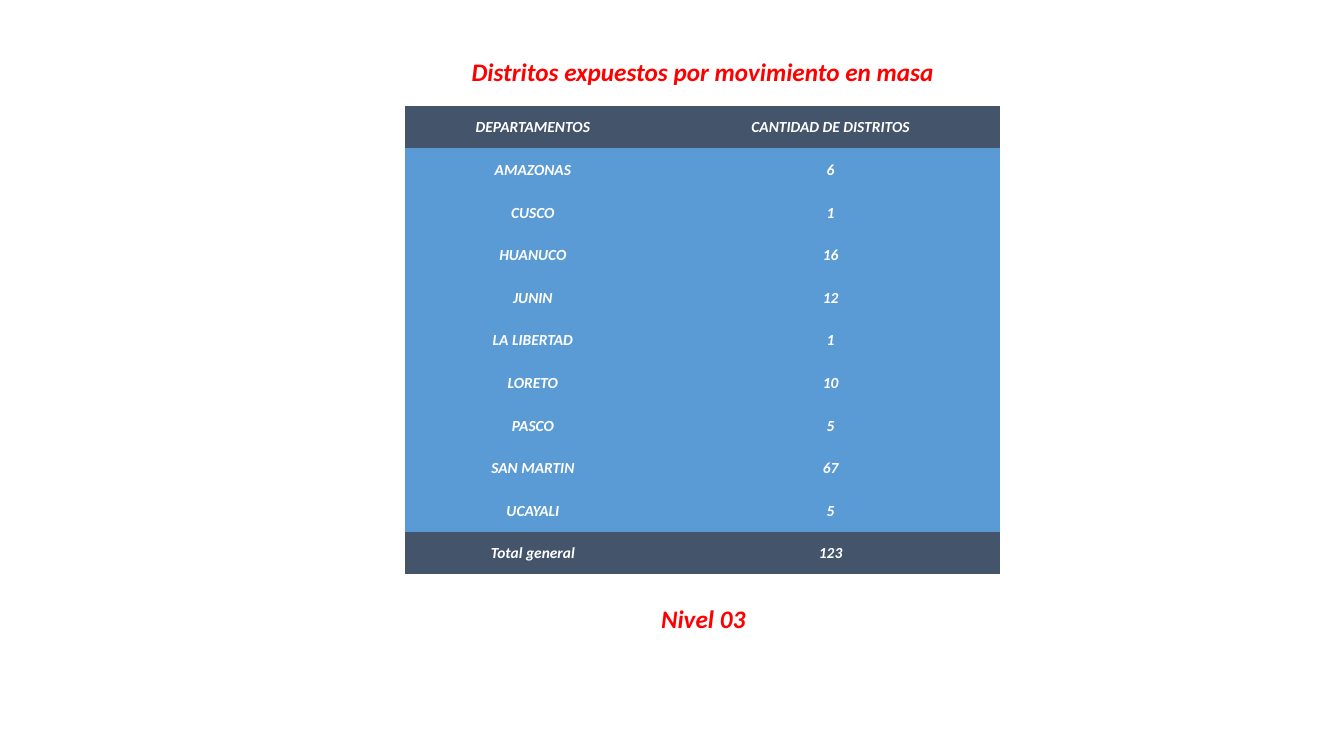
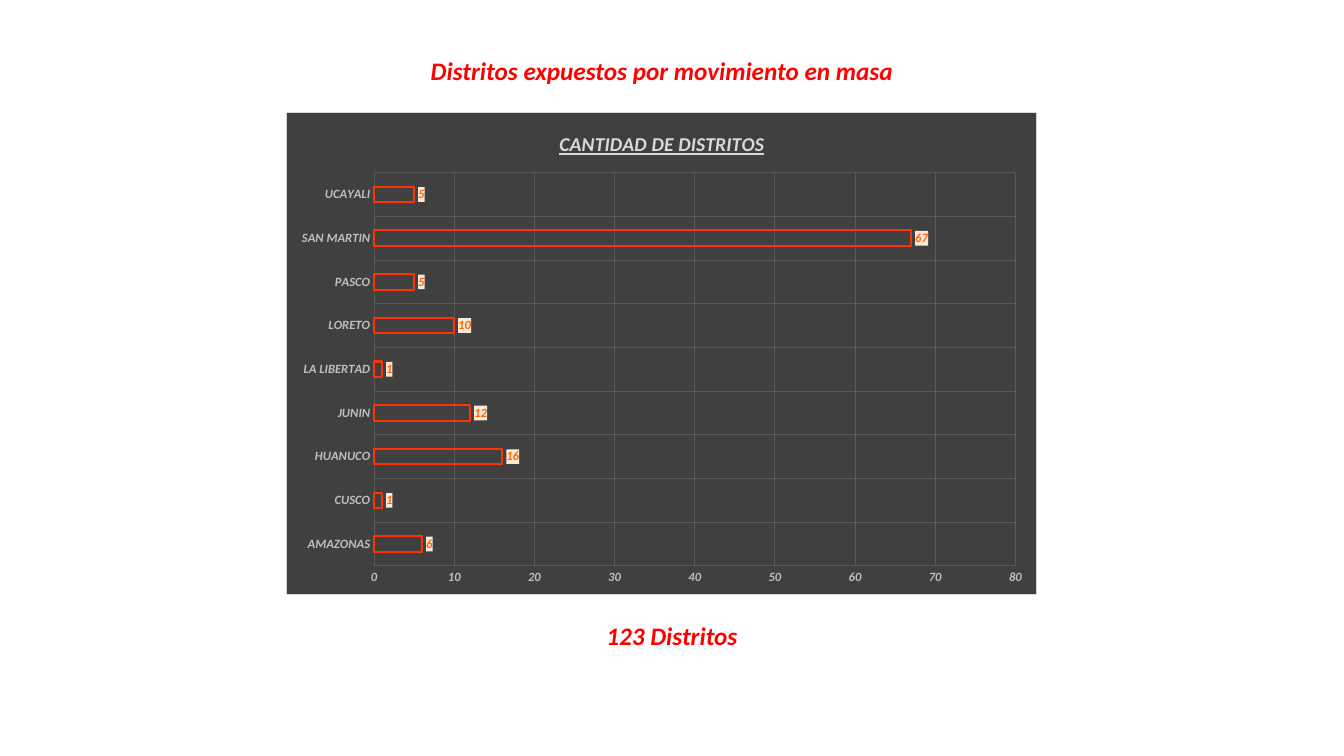
from lxml import etree
from pptx import Presentation
from pptx.chart.data import CategoryChartData
from pptx.dml.color import RGBColor
from pptx.enum.chart import XL_CHART_TYPE, XL_LABEL_POSITION, XL_TICK_MARK
from pptx.enum.text import MSO_ANCHOR, MSO_AUTO_SIZE, PP_ALIGN
from pptx.oxml import parse_xml
from pptx.oxml.ns import nsdecls, qn
from pptx.util import Inches, Pt

BAR = XL_CHART_TYPE.BAR_CLUSTERED
OUTSIDE_END = XL_LABEL_POSITION.OUTSIDE_END
NO_TICK = XL_TICK_MARK.NONE
CENTER = PP_ALIGN.CENTER
MIDDLE = MSO_ANCHOR.MIDDLE
NO_FIT = MSO_AUTO_SIZE.NONE

SLIDE_W, SLIDE_H = Inches(13.333), Inches(7.5)
COL, ROW = SLIDE_W / 160, SLIDE_H / 90
TITLE_ONLY = 5
HEADING_W, HEADING_H = 58.1, 4.8
FONT = "Calibri"
PLAIN_TABLE = "{2D5ABB26-0587-4C30-8999-92F81FD0307C}"
COLORS = {
    "heading": "FF0000", "white": "FFFFFF", "band": "44546A", "body": "5B9BD5",
    "panel": "404040", "border": "D9D9D9", "grid": "595959", "axis": "BFBFBF",
    "bar": "FF3300", "label": "FF6600", "label_back": "FCE9DA",
}
HEADING = "Distritos expuestos por movimiento en masa"
COUNT_HEADER = "CANTIDAD DE DISTRITOS"
DISTRICTS = {
    "AMAZONAS": 6, "CUSCO": 1, "HUANUCO": 16, "JUNIN": 12, "LA LIBERTAD": 1,
    "LORETO": 10, "PASCO": 5, "SAN MARTIN": 67, "UCAYALI": 5,
}
TOTAL = sum(DISTRICTS.values())


def set_all(target, values):
    """Set each named attribute of the target."""
    for name, value in values.items():
        setattr(target, name, value)


def rgb(name):
    """Return the palette colour of that name."""
    return RGBColor.from_string(COLORS[name])


def place(box):
    """Turn a box in grid columns and rows into slide lengths."""
    left, top, width, height = box
    return int(left * COL), int(top * ROW), int(width * COL), int(height * ROW)


def style_font(font, size, color, underline=None):
    """Apply the bold italic face shared by all the text."""
    set_all(font, {"name": FONT, "size": Pt(size), "bold": True, "italic": True,
                   "underline": underline})
    font.color.rgb = rgb(color)


def write(frame, text, size, color):
    """Write one centred line in a text frame."""
    frame.text = text
    paragraph = frame.paragraphs[0]
    paragraph.alignment = CENTER
    style_font(paragraph.runs[0].font, size, color)


def add_headings(slide, title_box, caption, caption_box):
    """Place the red title above and the red caption below the panel."""
    title = slide.shapes.title
    set_all(title, dict(zip(("left", "top", "width", "height"), place(title_box))))
    note = slide.shapes.add_textbox(*place(caption_box))
    for shape, text, wrap in ((title, HEADING, False), (note, caption, True)):
        set_all(shape.text_frame, {"word_wrap": wrap, "auto_size": NO_FIT,
                                   "vertical_anchor": MIDDLE})
        write(shape.text_frame, text, 18, "heading")


def add_district_table(slide, box):
    """Fill the box with the table of districts and its total."""
    rows = [("DEPARTAMENTOS", COUNT_HEADER), *DISTRICTS.items(), ("Total general", TOTAL)]
    left, top, width, height = place(box)
    table = slide.shapes.add_table(len(rows), 2, left, top, width, height).table
    table._tbl.tblPr.find(qn("a:tableStyleId")).text = PLAIN_TABLE
    set_all(table, {"first_row": False, "horz_banding": False})
    for column, share in zip(table.columns, (0.43, 0.57)):
        column.width = int(width * share)
    for index, values in enumerate(rows):
        table.rows[index].height = height // len(rows)
        fill = "band" if index in (0, len(rows) - 1) else "body"
        for cell, value in zip(table.rows[index].cells, values):
            set_all(cell, {"vertical_anchor": MIDDLE, "margin_left": Inches(0.01),
                           "margin_right": Inches(0.01), "margin_top": Inches(0.01),
                           "margin_bottom": 0})
            cell.fill.solid()
            cell.fill.fore_color.rgb = rgb(fill)
            write(cell.text_frame, str(value), 11, "white")


def add_backdrop(parent, fill, border=None):
    """Give a chart part a solid fill and an optional thin border."""
    backdrop = parse_xml(f"<c:spPr {nsdecls('c', 'a')}/>")
    parts = [(backdrop, fill)]
    if border:
        parts.append((etree.SubElement(backdrop, qn("a:ln"), w=str(Pt(0.75))), border))
    for holder, color in parts:
        solid = etree.Element(qn("a:solidFill"))
        etree.SubElement(solid, qn("a:srgbClr"), val=COLORS[color])
        holder.insert(0, solid)
    parent.find(qn("c:txPr")).addprevious(backdrop)


def style_axis(axis):
    """Format an axis with pale labels and a thin grid."""
    set_all(axis, {"major_tick_mark": NO_TICK, "minor_tick_mark": NO_TICK,
                   "has_major_gridlines": True})
    axis.format.line.fill.background()
    grid = axis.major_gridlines.format.line
    grid.width = Pt(0.75)
    grid.color.rgb = rgb("grid")
    style_font(axis.tick_labels.font, 9, "axis")


def style_bars(plot):
    """Draw hollow bars with a boxed value at the end of each."""
    set_all(plot, {"gap_width": 182, "overlap": -50, "vary_by_categories": False,
                   "has_data_labels": True})
    bars = plot.series[0].format
    bars.fill.background()
    bars.line.width = Pt(1.5)
    bars.line.color.rgb = rgb("bar")
    labels = plot.data_labels
    set_all(labels, {"show_value": True, "position": OUTSIDE_END,
                     "number_format": "#,##0", "number_format_is_linked": False})
    style_font(labels.font, 9, "label")
    add_backdrop(labels._element, "label_back")


def add_district_chart(slide, box):
    """Fill the box with the dark bar chart of districts."""
    data = CategoryChartData(number_format="#,##0")
    data.categories = list(DISTRICTS)
    data.add_series(COUNT_HEADER, list(DISTRICTS.values()))
    chart = slide.shapes.add_chart(BAR, *place(box), data).chart
    set_all(chart, {"has_legend": False, "has_title": True})
    set_all(chart.font, {"name": FONT, "size": Pt(10)})
    add_backdrop(chart._chartSpace, "panel", "border")
    title = chart.chart_title.text_frame
    title.text = COUNT_HEADER
    style_font(title.paragraphs[0].runs[0].font, 14, "border", True)
    for axis in (chart.category_axis, chart.value_axis):
        style_axis(axis)
    set_all(chart.value_axis, {"minimum_scale": 0, "maximum_scale": 80, "major_unit": 10})
    style_bars(chart.plots[0])


def add_panel_slide(deck, add_panel, panel_box, title_top, caption, caption_box):
    """Build a slide with a panel between its title and caption."""
    slide = deck.slides.add_slide(deck.slide_layouts[TITLE_ONLY])
    left, _, width, _ = panel_box
    title_box = (left + (width - HEADING_W) / 2, title_top, HEADING_W, HEADING_H)
    add_headings(slide, title_box, caption, caption_box)
    add_panel(slide, panel_box)


def main():
    """Build and save the deck."""
    deck = Presentation()
    set_all(deck, {"slide_width": SLIDE_W, "slide_height": SLIDE_H})
    add_panel_slide(deck, add_district_table, (48.2, 12.6, 70.9, 55.8), 6.1,
                    "Nivel 03", (77.3, 71.2, 12.85, HEADING_H))
    add_panel_slide(deck, add_district_chart, (34.1, 13.3, 89.4, 57.5), 6,
                    f"{TOTAL} Distritos", (70, 73.3, 20, HEADING_H))
    deck.save("out.pptx")


if __name__ == "__main__":
    main()
